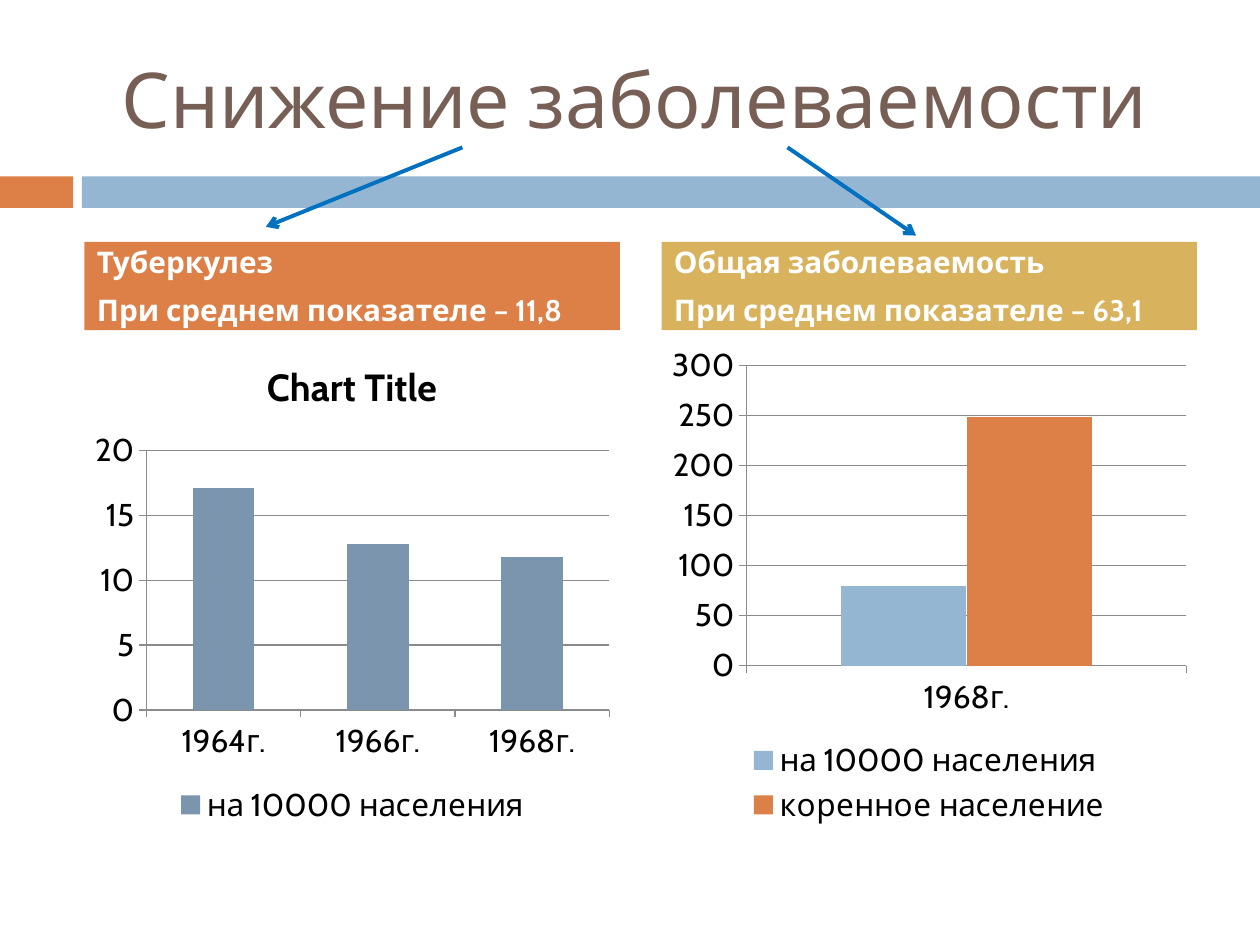
"""Build the slide about the fall in disease rates."""
import pptx
import pptx.chart.data
import pptx.dml.color
import pptx.enum.chart
import pptx.enum.shapes
import pptx.enum.text
import pptx.oxml
import pptx.oxml.ns
import pptx.util

Inches, Pt = pptx.util.Inches, pptx.util.Pt
RGB = pptx.dml.color.RGBColor.from_string
XL = pptx.enum.chart
COLORS = {"orange": "DD8047", "blue": "94B6D2", "slate": "7B95AF", "gold": "D8B25C",
          "green": "A5AB81", "brown": "775F55", "arrow": "0070C0", "grid": "8B8B8B",
          "white": "FFFFFF", "black": "000000"}


def set_font(font, color, **fmt):
    for name, value in {"name": "Cabin", **fmt}.items():
        setattr(font, name, value)
    font.color.rgb = RGB(COLORS[color])


def add_box(s, box, color):
    sp = s.shapes.add_shape(pptx.enum.shapes.MSO_SHAPE.RECTANGLE, *map(Inches, box))
    sp.shadow.inherit = False
    sp.fill.solid()
    sp.fill.fore_color.rgb = RGB(COLORS[color])
    sp.line.fill.background()
    return sp


prs = pptx.Presentation()
prs.slide_width, prs.slide_height = Inches(10), Inches(7.5)
s = prs.slides.add_slide(prs.slide_layouts[6])

add_box(s, (0, 1.4, 0.58, 0.25), "orange")
add_box(s, (0.65, 1.4, 9.35, 0.25), "blue")

tf = s.shapes.add_textbox(Inches(0.58), Inches(0.3), Inches(8.92), Inches(0.95)).text_frame
tf.word_wrap = True
tf.vertical_anchor = pptx.enum.text.MSO_ANCHOR.MIDDLE
p = tf.paragraphs[0]
p.alignment = pptx.enum.text.PP_ALIGN.CENTER
r = p.add_run()
r.text = "Снижение заболеваемости"
set_font(r.font, "brown", size=Pt(44))

columns = [
    {"left": 0.67, "fill": "orange", "title": "Chart Title",
     "lines": ["Туберкулез", "При среднем показателе – 11,8"],
     "cats": ["1964г.", "1966г.", "1968г."],
     "series": [("на 10000 населения", [17.1, 12.8, 11.8], "slate"),
                ("", [], "orange"), ("", [], "green")]},
    {"left": 5.25, "fill": "gold", "title": None,
     "lines": ["Общая заболеваемость", "При среднем показателе – 63,1"],
     "cats": ["1968г."],
     "series": [("на 10000 населения", [79], "blue"),
                ("коренное население", [248], "orange")]},
]
for col in columns:
    data = pptx.chart.data.CategoryChartData()
    data.categories = col["cats"]
    for name, values, _ in col["series"]:
        data.add_series(name, values)
    chart = s.shapes.add_chart(XL.XL_CHART_TYPE.COLUMN_CLUSTERED, Inches(col["left"]),
                               Inches(2.67), Inches(4.25), Inches(3.92), data).chart
    set_font(chart.font, "black", size=Pt(18))
    chart.has_title = bool(col["title"])
    if col["title"]:
        r = chart.chart_title.text_frame.paragraphs[0].add_run()
        r.text = col["title"]
        set_font(r.font, "black", size=Pt(21.6), bold=True)
    chart.has_legend = True
    for name, value in {"position": XL.XL_LEGEND_POSITION.BOTTOM,
                        "include_in_layout": False}.items():
        setattr(chart.legend, name, value)
    plot = chart.plots[0]
    for name, value in {"gap_width": 150, "overlap": 0, "vary_by_categories": False}.items():
        setattr(plot, name, value)
    for ser, (_, values, color) in zip(plot.series, col["series"]):
        ser.format.fill.solid()
        ser.format.fill.fore_color.rgb = RGB(COLORS[color])
        if not values:
            for tag in ("c:tx", "c:cat", "c:val"):
                for el in ser._element.findall(pptx.oxml.ns.qn(tag)):
                    ser._element.remove(el)
    chart.value_axis.has_major_gridlines = True
    for axis in (chart.category_axis, chart.value_axis):
        axis.major_tick_mark = XL.XL_TICK_MARK.OUTSIDE
        axis.minor_tick_mark = XL.XL_TICK_MARK.NONE
    for part in (chart.category_axis, chart.value_axis, chart.value_axis.major_gridlines):
        part.format.line.color.rgb = RGB(COLORS["grid"])
        part.format.line.width = Pt(0.75)

    tf = add_box(s, (col["left"], 1.92, 4.25, 0.7), col["fill"]).text_frame
    tf.word_wrap = True
    tf.vertical_anchor = pptx.enum.text.MSO_ANCHOR.MIDDLE
    for i, line in enumerate(col["lines"]):
        p = tf.add_paragraph() if i else tf.paragraphs[0]
        p.alignment = pptx.enum.text.PP_ALIGN.LEFT
        p.space_before = Pt(7)
        r = p.add_run()
        r.text = line
        set_font(r.font, "white", size=Pt(17), bold=True)

for ends in [(3.67, 1.17, 2.11, 1.8), (6.25, 1.17, 7.27, 1.87)]:
    arrow = s.shapes.add_connector(pptx.enum.shapes.MSO_CONNECTOR.STRAIGHT, *map(Inches, ends))
    arrow.line.color.rgb = RGB(COLORS["arrow"])
    arrow.line.width = Pt(2.25)
    tail = pptx.oxml.parse_xml(f'<a:tailEnd {pptx.oxml.ns.nsdecls("a")} type="arrow"/>')
    arrow.line._get_or_add_ln().append(tail)
    effects = pptx.oxml.parse_xml(f'<a:effectLst {pptx.oxml.ns.nsdecls("a")}/>')
    arrow._element.spPr.append(effects)

prs.save("out.pptx")
